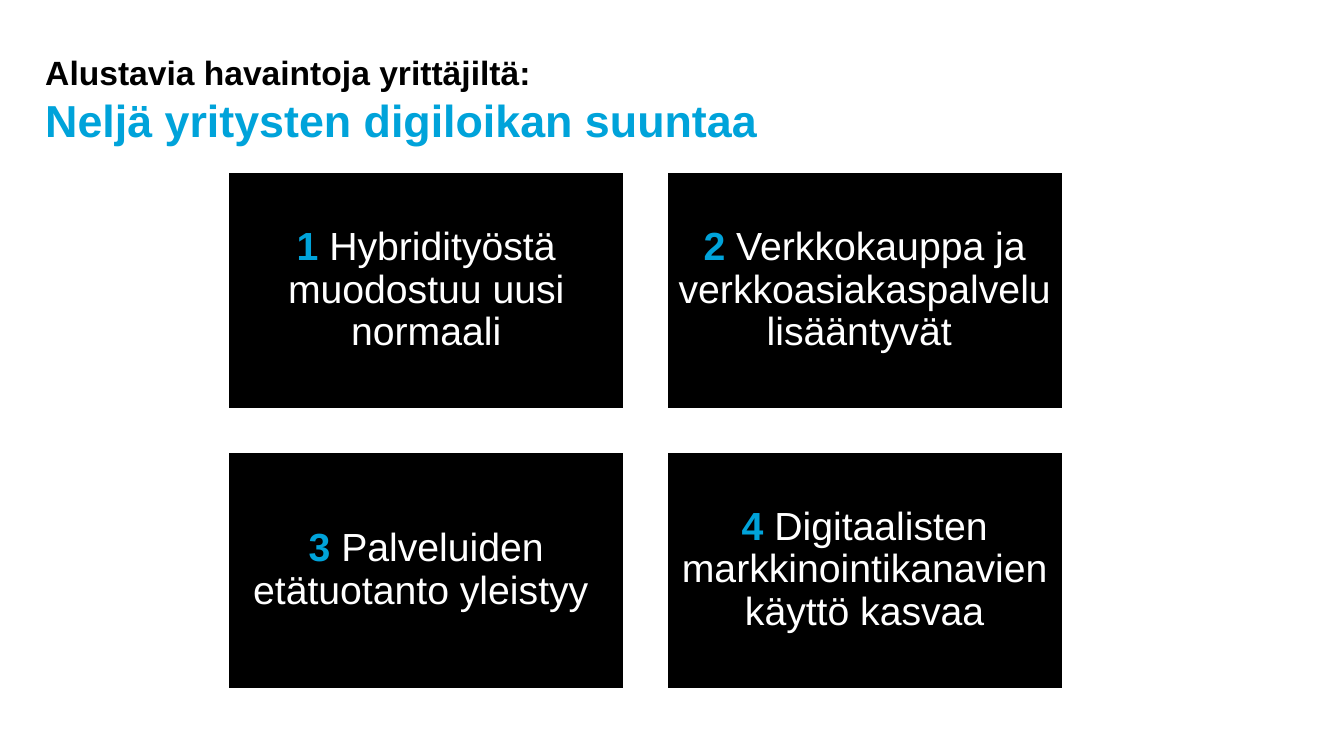
from pptx import Presentation
from pptx.dml.color import RGBColor
from pptx.enum import shapes, text
from pptx.util import Cm, Pt

COLORS = {"black": "000000", "white": "FFFFFF", "accent": "00A3DA"}


def add_run(paragraph, wording, size, color, bold):
    run = paragraph.add_run()
    run.text = wording
    run.font.name = "Arial"
    run.font.size = Pt(size)
    run.font.bold = bold
    run.font.color.rgb = RGBColor.from_string(COLORS[color])


deck = Presentation()
deck.slide_width, deck.slide_height = Cm(33.87), Cm(19.05)
slide = deck.slides.add_slide(deck.slide_layouts[5])

heading = slide.shapes.title
heading.left, heading.top = Cm(1.14), Cm(0.58)
heading.width, heading.height = Cm(26.21), Cm(3.1)
heading_frame = heading.text_frame
heading_frame.auto_size = text.MSO_AUTO_SIZE.NONE
heading_frame.word_wrap = True
heading_frame.vertical_anchor = text.MSO_ANCHOR.BOTTOM
heading_frame.margin_left = heading_frame.margin_right = 0
heading_frame.margin_top = heading_frame.margin_bottom = 0
heading_line = heading_frame.paragraphs[0]
heading_line.alignment = text.PP_ALIGN.LEFT
add_run(heading_line, "Alustavia havaintoja yrittäjiltä:", 24, "black", True)
heading_line.add_line_break()
add_run(heading_line, "Neljä yritysten digiloikan suuntaa", 32, "accent", True)

directions = [
    "Hybridityöstä muodostuu uusi normaali",
    "Verkkokauppa ja verkkoasiakaspalvelu lisääntyvät ",
    "Palveluiden etätuotanto yleistyy ",
    "Digitaalisten markkinointikanavien käyttö kasvaa",
]
card_width, card_height, gap = 10, 6, 1.05

for index, direction in enumerate(directions):
    row, column = divmod(index, 2)
    card = slide.shapes.add_shape(
        shapes.MSO_SHAPE.RECTANGLE,
        Cm(5.74 + column * (card_width + gap)),
        Cm(4.32 + row * (card_height + gap)),
        Cm(card_width),
        Cm(card_height),
    )
    card.shadow.inherit = False
    card.fill.solid()
    card.fill.fore_color.rgb = RGBColor.from_string(COLORS["black"])
    card.line.color.rgb = RGBColor.from_string(COLORS["white"])
    card.line.width = Pt(2)
    card_frame = card.text_frame
    card_frame.word_wrap = True
    card_frame.vertical_anchor = text.MSO_ANCHOR.MIDDLE
    card_frame.margin_left = card_frame.margin_right = Cm(0.29)
    card_frame.margin_top = card_frame.margin_bottom = Cm(0.29)
    card_line = card_frame.paragraphs[0]
    card_line.alignment = text.PP_ALIGN.CENTER
    card_line.line_spacing = 0.9
    add_run(card_line, str(index + 1), 28, "accent", True)
    add_run(card_line, f" {direction}", 28, "white", False)

deck.save("out.pptx")
